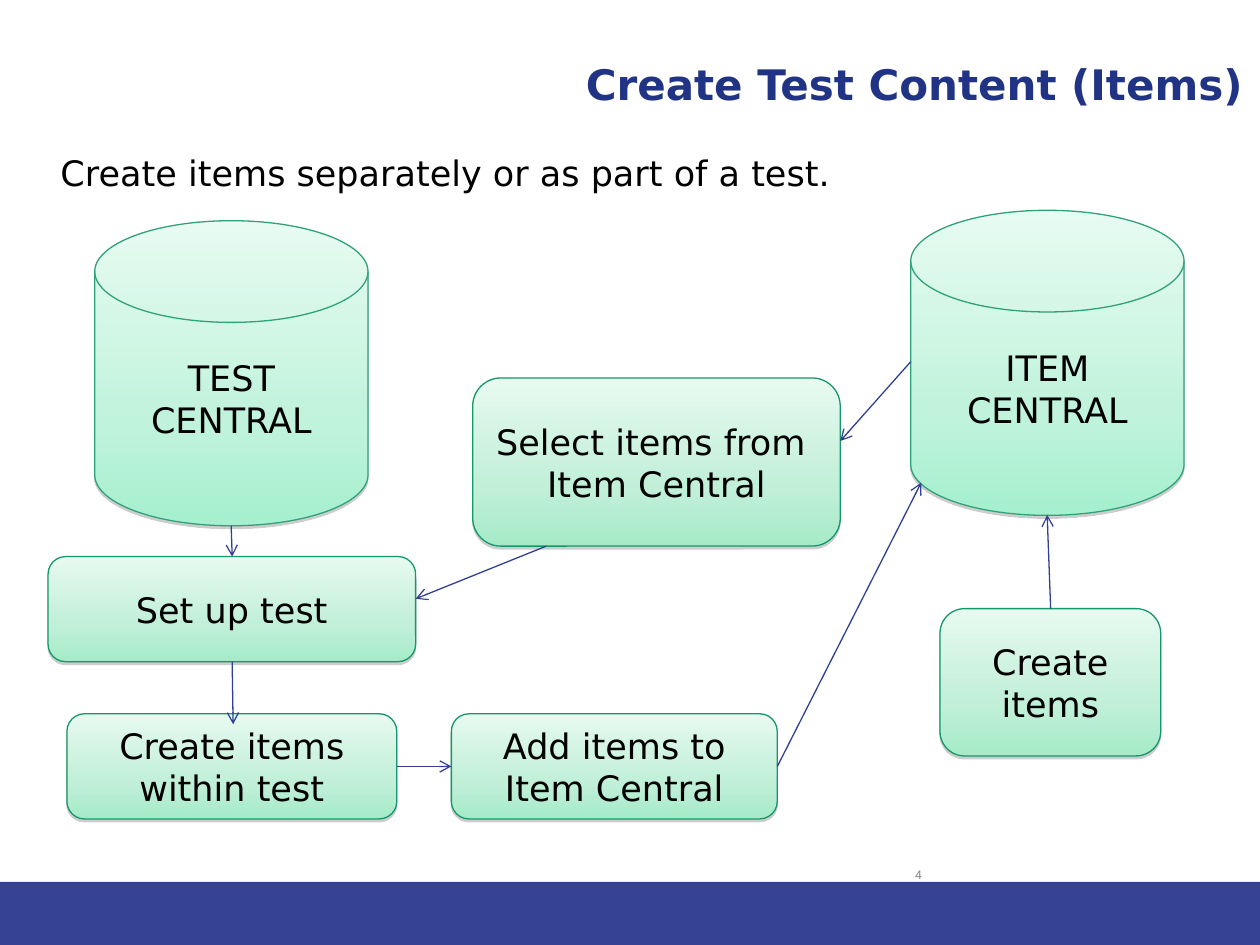
import pptx
import pptx.dml.color
import pptx.enum.shapes
import pptx.enum.text
import pptx.oxml
import pptx.oxml.ns
import pptx.util
import copy

Cm, Pt = pptx.util.Cm, pptx.util.Pt
SHAPE = pptx.enum.shapes.MSO_SHAPE
ANCHOR = pptx.enum.text.MSO_ANCHOR
ALIGN = pptx.enum.text.PP_ALIGN
FONT = "DejaVu Sans"
COLORS = {
    "footer": "364395", "title": "213384", "text": "000000",
    "number": "808080", "shadow": "808080", "arrow": "324094",
    "store_line": "2FA17B", "step_line": "15976B",
}
STORE_FILL = ["E7FBF2", "C1F3DC", "A5F0CE"]
STEP_FILL = ["E7FAF0", "C1EFD8", "A5EBC8"]
GRADIENT_POSITIONS = [0, 0.65, 1]


def rgb(value):
    return pptx.dml.color.RGBColor.from_string(value)


class FlowSlide:
    def __init__(self, prs):
        self.slide = prs.slides.add_slide(prs.slide_layouts[6])
        self.shapes = self.slide.shapes

    def set_lines(self, tf, lines, size, color, font=FONT, bold=False, align=ALIGN.LEFT):
        tf.word_wrap = True
        for i, line in enumerate(lines):
            p = tf.paragraphs[0] if i == 0 else tf.add_paragraph()
            p.text = line
            p.alignment = align
            p.font.name, p.font.size, p.font.bold = font, Pt(size), bold
            p.font.color.rgb = rgb(COLORS[color])

    def text(self, box, content, size, color, **style):
        sp = self.shapes.add_textbox(*map(Cm, box))
        self.set_lines(sp.text_frame, [content], size, color, **style)
        return sp.text_frame

    def bar(self, box, color):
        sp = self.shapes.add_shape(SHAPE.RECTANGLE, *map(Cm, box))
        sp.shadow.inherit = False
        sp.fill.solid()
        sp.fill.fore_color.rgb = rgb(COLORS[color])
        sp.line.fill.background()

    def gradient(self, sp, colors):
        """Fill from top to bottom with three stops."""
        sp.fill.gradient()
        sp.fill.gradient_angle = 270
        first = sp._element.spPr.find(".//" + pptx.oxml.ns.qn("a:gs"))
        first.addnext(copy.deepcopy(first))
        for stop, position, color in zip(sp.fill.gradient_stops, GRADIENT_POSITIONS, colors):
            stop.position = position
            stop.color.rgb = rgb(color)

    def node(self, kind, box, lines, colors, line):
        sp = self.shapes.add_shape(kind, *map(Cm, box))
        self.gradient(sp, colors)
        sp.line.color.rgb = rgb(COLORS[line])
        sp.line.width = Pt(0.75)
        sp.shadow.inherit = False
        effects = sp._element.spPr.find(pptx.oxml.ns.qn("a:effectLst"))
        effects.append(pptx.oxml.parse_xml(
            f'<a:outerShdw {pptx.oxml.ns.nsdecls("a")} blurRad="0" dist="20000" '
            f'dir="5400000" rotWithShape="0"><a:srgbClr val="{COLORS["shadow"]}">'
            '<a:alpha val="38000"/></a:srgbClr></a:outerShdw>'))
        sp.text_frame.vertical_anchor = ANCHOR.MIDDLE
        self.set_lines(sp.text_frame, lines, 20, "text", align=ALIGN.CENTER)

    def store(self, left, top, label):
        self.node(SHAPE.FLOWCHART_MAGNETIC_DISK, (left, top, 5.51, 6.15),
                  [label], STORE_FILL, "store_line")

    def step(self, box, *lines):
        self.node(SHAPE.ROUNDED_RECTANGLE, box, lines, STEP_FILL, "step_line")

    def arrow(self, *ends):
        cxn = self.shapes.add_connector(
            pptx.enum.shapes.MSO_CONNECTOR.STRAIGHT, *map(Cm, ends))
        cxn.line.color.rgb = rgb(COLORS["arrow"])
        cxn.line.width = Pt(0.75)
        ns = pptx.oxml.ns.nsdecls("a")
        spPr = cxn._element.spPr
        spPr.find(pptx.oxml.ns.qn("a:ln")).append(
            pptx.oxml.parse_xml(f'<a:tailEnd {ns} type="arrow"/>'))
        spPr.append(pptx.oxml.parse_xml(f"<a:effectLst {ns}/>"))


def main():
    prs = pptx.Presentation()
    prs.slide_width, prs.slide_height = Cm(25.4), Cm(19.05)
    s = FlowSlide(prs)

    s.bar((0, 17.78, 25.4, 1.27), "footer")
    title = s.text((11.81, 1.09, 14.43, 1.65), "Create Test Content (Items)",
                   24, "title", bold=True)
    title.margin_left = 0
    title.margin_top = Cm(0.08)
    s.text((0.97, 2.92, 21.31, 1.11),
           "Create items separately or as part of a test.", 20, "text")

    s.store(18.36, 4.24, "ITEM CENTRAL")
    s.store(1.91, 4.45, "TEST CENTRAL")

    s.step((18.95, 12.27, 4.45, 2.97), "Create items")
    s.step((0.97, 11.22, 7.41, 2.12), "Set up test")
    s.step((1.35, 14.39, 6.65, 2.12), "Create items within test")
    s.step((9.1, 14.39, 6.57, 2.12), "Add items to Item Central")
    s.step((9.53, 7.62, 7.41, 3.39), "Select items from ", "Item Central")

    for ends in [
        (8, 15.45, 9.1, 15.45),
        (15.67, 15.45, 18.57, 9.73),
        (4.66, 10.6, 4.68, 11.22),
        (4.68, 13.34, 4.7, 14.6),
        (21.18, 12.27, 21.11, 10.38),
        (11.01, 11.01, 8.38, 12.07),
        (18.36, 7.29, 16.94, 8.89),
    ]:
        s.arrow(*ends)

    s.text((18.2, 17.36, 5.29, 1.27), "4", 7, "number", font="Arial")
    prs.save("out.pptx")


if __name__ == "__main__":
    main()
